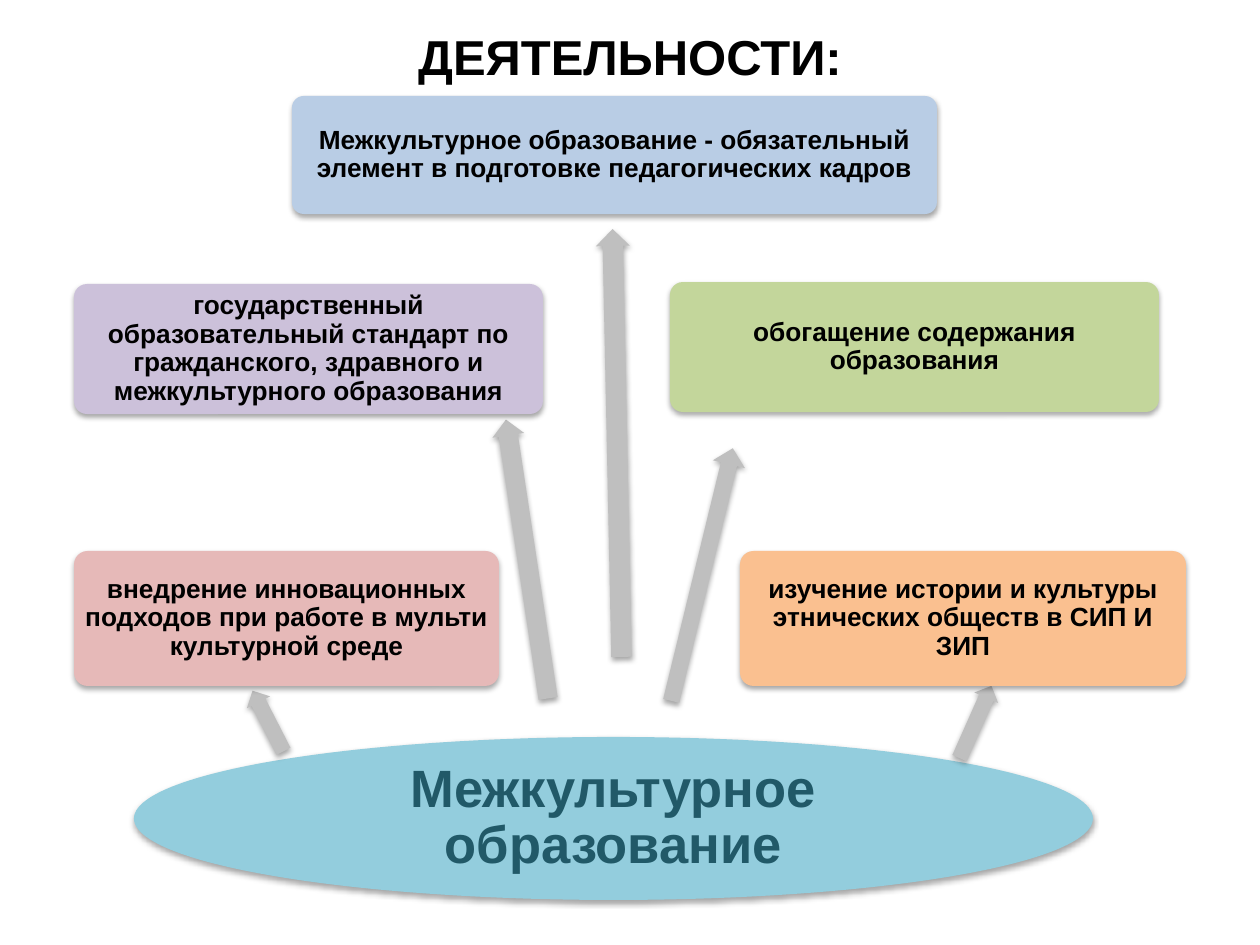
"""Builds a slide of five activities branching out of intercultural education."""
from dataclasses import dataclass

from lxml import etree
from pptx import Presentation
from pptx import util as u
from pptx.dml.color import RGBColor
from pptx.enum import shapes, text
from pptx.oxml import ns

PX = 914400 / 126
FONT = "Arial"
BLACK = RGBColor(0x00, 0x00, 0x00)
TEAL = RGBColor(0x21, 0x59, 0x68)
AQUA = RGBColor(0x93, 0xCD, 0xDD)
GREY = RGBColor(0xBF, 0xBF, 0xBF)
PINK = RGBColor(0xE6, 0xB9, 0xB8)
LILAC = RGBColor(0xCC, 0xC1, 0xDA)
BLUE = RGBColor(0xB9, 0xCD, 0xE5)
GREEN = RGBColor(0xC3, 0xD6, 0x9B)
ORANGE = RGBColor(0xFA, 0xC0, 0x90)


@dataclass(frozen=True)
class Box:
    left: int
    top: int
    width: int
    height: int

    def emu(self) -> list[int]:
        return [px(n) for n in (self.left, self.top, self.width, self.height)]


@dataclass(frozen=True)
class Branch:
    label: str
    card: Box
    fill: RGBColor
    arrow: Box
    rotation: float
    shaft: float = 0.6


BRANCHES = [
    Branch("внедрение инновационных подходов при работе в мульти культурной среде",
           Box(74, 551, 425, 135), PINK, Box(234, 708, 68, 26), 62.9),
    Branch("государственный образовательный стандарт по гражданского, здравного "
           "и межкультурного образования",
           Box(74, 284, 469, 130), LILAC, Box(386, 543, 282, 32), 81.4),
    Branch("Межкультурное образование - обязательный элемент в подготовке "
           "педагогических кадров",
           Box(292, 96, 645, 118), BLUE, Box(403, 426, 428, 34), 88.8),
    Branch("обогащение содержания образования",
           Box(670, 282, 489, 130), GREEN, Box(572, 558, 260, 33), 103.7, 0.5),
    Branch("изучение истории и культуры этнических обществ в СИП И ЗИП",
           Box(740, 551, 446, 135), ORANGE, Box(936, 709, 79, 26), 113.9),
]


def px(length: int) -> int:
    return round(length * PX)


def add_shadow(shape) -> None:
    shape.shadow.inherit = False
    effects = shape._element.spPr.find(ns.qn("a:effectLst"))
    shadow = etree.SubElement(effects, ns.qn("a:outerShdw"), blurRad="40000",
                              dist="23000", dir="5400000", rotWithShape="0")
    color = etree.SubElement(shadow, ns.qn("a:srgbClr"), val="000000")
    etree.SubElement(color, ns.qn("a:alpha"), val="35000")


def add_solid(slide, kind: shapes.MSO_SHAPE, box: Box, fill: RGBColor):
    shape = slide.shapes.add_shape(kind, *box.emu())
    shape.fill.solid()
    shape.fill.fore_color.rgb = fill
    shape.line.fill.background()
    add_shadow(shape)
    return shape


def write(shape, words: str, size: int, color: RGBColor, inset: int,
          spacing: float = 0.9) -> None:
    frame = shape.text_frame
    frame.text = words
    frame.word_wrap = True
    frame.vertical_anchor = text.MSO_ANCHOR.MIDDLE
    frame.margin_left = frame.margin_right = px(inset)
    frame.margin_top = frame.margin_bottom = px(inset)
    paragraph = frame.paragraphs[0]
    paragraph.alignment = text.PP_ALIGN.CENTER
    paragraph.line_spacing = spacing
    font = paragraph.runs[0].font
    font.name, font.size, font.bold = FONT, u.Pt(size), True
    font.color.rgb = color


def add_branch(slide, branch: Branch) -> None:
    arrow = add_solid(slide, shapes.MSO_SHAPE.LEFT_ARROW, branch.arrow, GREY)
    arrow.rotation = branch.rotation
    arrow.adjustments[0] = branch.shaft
    card = add_solid(slide, shapes.MSO_SHAPE.ROUNDED_RECTANGLE, branch.card, branch.fill)
    card.adjustments[0] = 0.1
    write(card, branch.label, 15, BLACK, 4)


def main() -> None:
    presentation = Presentation()
    presentation.slide_width, presentation.slide_height = px(1260), px(945)
    slide = presentation.slides.add_slide(presentation.slide_layouts[6])
    title = slide.shapes.add_textbox(*Box(63, 26, 1134, 59).emu())
    write(title, "ДЕЯТЕЛЬНОСТИ:", 28, BLACK, 6, 1.0)
    root = add_solid(slide, shapes.MSO_SHAPE.OVAL, Box(134, 737, 959, 163), AQUA)
    write(root, "Межкультурное образование", 30, TEAL, 3)
    for branch in BRANCHES:
        add_branch(slide, branch)
    presentation.save("out.pptx")


if __name__ == "__main__":
    main()
